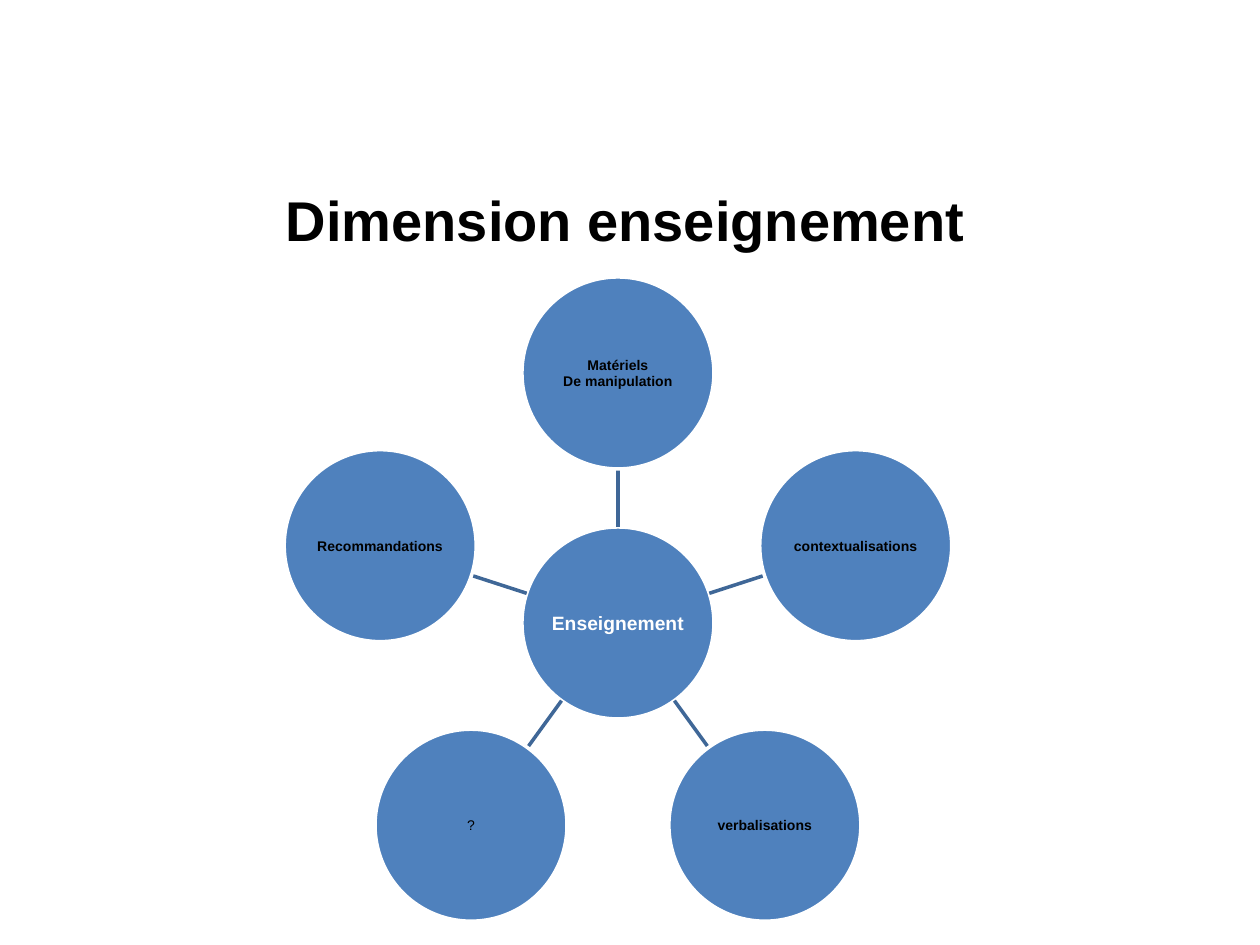
from dataclasses import dataclass
from math import cos, radians, sin

from lxml.etree import SubElement
from pptx import Presentation
from pptx.dml.color import RGBColor
from pptx.enum.shapes import MSO_CONNECTOR, MSO_SHAPE
from pptx.enum.text import MSO_ANCHOR, PP_ALIGN
from pptx.oxml.ns import qn
from pptx.util import Pt

EMU_PER_PX = 914400 / 126
HUB = (618, 623)
ORBIT = 250
DIAMETER = 192
SATELLITES = [
    ("Matériels\nDe manipulation", True),
    ("contextualisations", True),
    ("verbalisations", True),
    ("?", False),
    ("Recommandations", True),
]


def px(length):
    """Turn pixels into EMU."""
    return round(length * EMU_PER_PX)


@dataclass(frozen=True)
class Theme:
    """Colours, font and type sizes of the slide."""
    font: str = "Arial"
    black: RGBColor = RGBColor(0x00, 0x00, 0x00)
    white: RGBColor = RGBColor(0xFF, 0xFF, 0xFF)
    disc: RGBColor = RGBColor(0x4F, 0x81, 0xBD)
    spoke: RGBColor = RGBColor(0x3F, 0x67, 0x97)
    title_size: int = 32
    hub_size: int = 11
    satellite_size: int = 8
    line_width: int = 2


class SlideBuilder:
    """Draw styled elements on the current slide."""

    def __init__(self, page, theme):
        """Keep the slide and its style."""
        self.page = page
        self.theme = theme

    def label(self, frame, text, size, color, bold=True):
        """Fill a text frame with centred, formatted text."""
        frame.text = text
        frame.word_wrap = True
        frame.vertical_anchor = MSO_ANCHOR.MIDDLE
        for para in frame.paragraphs:
            para.alignment = PP_ALIGN.CENTER
            for span in para.runs:
                span.font.name = self.theme.font
                span.font.size = Pt(size)
                span.font.bold = bold
                span.font.color.rgb = color

    def title(self, text, left, top, width, height):
        """Place and format the slide title."""
        box = self.page.shapes.title
        box.left, box.top, box.width, box.height = map(px, (left, top, width, height))
        self.label(box.text_frame, text, self.theme.title_size, self.theme.black)

    def disc(self, center, text, size, color, bold=True):
        """Draw a labelled circle around a centre."""
        left, top = (px(value - DIAMETER / 2) for value in center)
        disc = self.page.shapes.add_shape(
            MSO_SHAPE.OVAL, left, top, px(DIAMETER), px(DIAMETER))
        disc.shadow.inherit = False
        disc.fill.solid()
        disc.fill.fore_color.rgb = self.theme.disc
        disc.line.color.rgb = self.theme.white
        disc.line.width = Pt(self.theme.line_width)
        frame = disc.text_frame
        frame.margin_left = frame.margin_right = px(1)
        frame.margin_top = frame.margin_bottom = px(1)
        self.label(frame, text, size, color, bold)

    def spoke(self, start, end):
        """Draw a straight line between two points."""
        line = self.page.shapes.add_connector(
            MSO_CONNECTOR.STRAIGHT, *map(px, (*start, *end)))
        line.line.color.rgb = self.theme.spoke
        line.line.width = Pt(self.theme.line_width)
        SubElement(line._element.spPr, qn("a:effectLst"))


def around_hub(angle, distance):
    """Return the point at a clockwise angle from the top of the hub."""
    turn = radians(angle)
    return HUB[0] + distance * sin(turn), HUB[1] - distance * cos(turn)


def main():
    """Build and save the slide."""
    deck = Presentation()
    deck.slide_width, deck.slide_height = px(1260), px(945)
    theme = Theme()
    builder = SlideBuilder(deck.slides.add_slide(deck.slide_layouts[5]), theme)
    builder.title("Dimension enseignement", 54, 161, 1143, 116)
    builder.disc(HUB, "Enseignement", theme.hub_size, theme.white)
    radius = DIAMETER / 2
    for index, (text, bold) in enumerate(SATELLITES):
        angle = index * 360 / len(SATELLITES)
        builder.spoke(around_hub(angle, radius), around_hub(angle, ORBIT - radius))
        builder.disc(around_hub(angle, ORBIT), text,
                     theme.satellite_size, theme.black, bold)
    deck.save("out.pptx")


if __name__ == "__main__":
    main()
